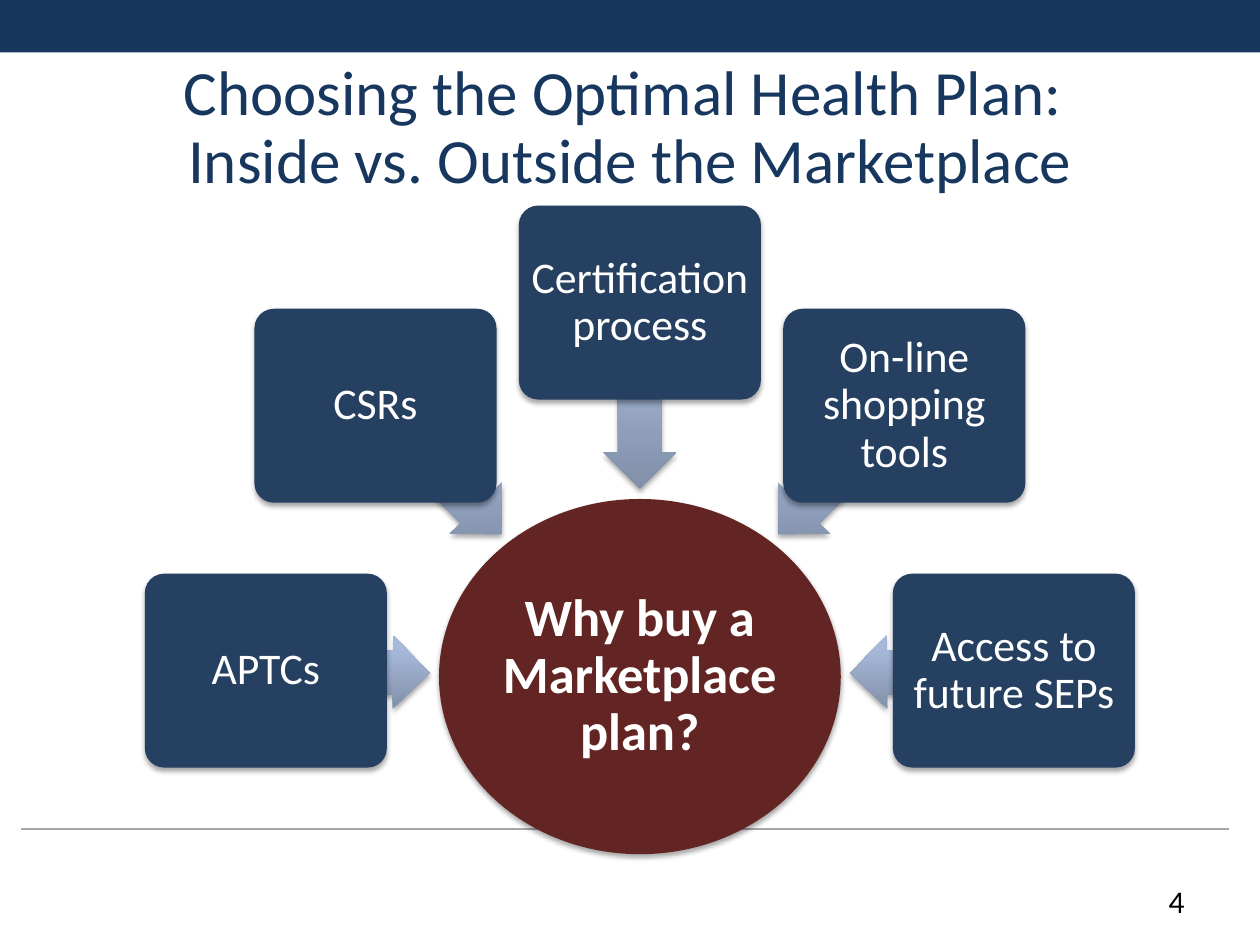
from lxml.etree import SubElement
from pptx import Presentation
from pptx.dml.color import RGBColor
from pptx.enum.shapes import MSO_CONNECTOR, MSO_SHAPE
from pptx.enum.text import MSO_ANCHOR, PP_ALIGN
from pptx.oxml import parse_xml
from pptx.oxml.ns import nsdecls, qn
from pptx.util import Cm, Pt

COLORS = {
    "navy": "17375E",
    "box": "254061",
    "hub": "632523",
    "rule": "A6A6A6",
    "white": "FFFFFF",
    "black": "000000",
}
ARROW_STOPS = [(0, "818FA8"), (80, "A7B9DA"), (100, "A7BADC")]
FONT = "Calibri"
CENTER_X = 12.9
BOX_SIZE = (4.88, 3.91)
ARROW_HEIGHT = 1.47

# distance from the centre line and height of each level's boxes and arrows
LEVELS = {
    "low": {"box": (7.54, 13.52), "arrow": (5.89, 13.54), "length": 3.3, "tilt": 89},
    "middle": {"box": (5.33, 8.18), "arrow": (4.06, 9.47), "length": 3.63, "tilt": 44.3},
    "top": {"box": (0, 6.1), "arrow": (0, 7.98), "length": 3.76, "tilt": 0},
}
REASONS = [
    ("APTCs", "low", -1),
    ("CSRs", "middle", -1),
    ("Certification process", "top", 1),
    ("On-line shopping tools", "middle", 1),
    ("Access to future SEPs", "low", 1),
]


def color(name):
    return RGBColor.from_string(COLORS[name])


def write_text(shape, text, size, ink, align=PP_ALIGN.CENTER, spacing=0.9,
               bold=False, margin=None, anchor=MSO_ANCHOR.MIDDLE):
    frame = shape.text_frame
    frame.word_wrap = True
    frame.vertical_anchor = anchor
    if margin is not None:
        frame.margin_left = frame.margin_right = Cm(margin)
        frame.margin_top = frame.margin_bottom = Cm(margin)
    para = frame.paragraphs[0]
    para.text = text
    para.alignment = align
    para.line_spacing = spacing
    para.font.name = FONT
    para.font.size = Pt(size)
    para.font.bold = bold
    para.font.color.rgb = color(ink)


def add_text(page, left, top, width, height, text, size, ink, **options):
    box = page.shapes.add_textbox(Cm(left), Cm(top), Cm(width), Cm(height))
    write_text(box, text, size, ink, **options)


def add_centered(page, kind, center, size, fill=None):
    """Add a borderless shape around its centre point."""
    (x, y), (width, height) = center, size
    shape = page.shapes.add_shape(
        kind, Cm(x - width / 2), Cm(y - height / 2), Cm(width), Cm(height))
    shape.line.fill.background()
    shape.shadow.inherit = False
    if fill:
        shape.fill.solid()
        shape.fill.fore_color.rgb = color(fill)
    return shape


def add_soft_shadow(shape):
    effects = shape._element.spPr.find(qn("a:effectLst"))
    effects.append(parse_xml(
        f'<a:outerShdw {nsdecls("a")} blurRad="{Pt(3.1)}" dist="{Pt(1.8)}" '
        f'dir="5400000" rotWithShape="0"><a:srgbClr val="{COLORS["black"]}">'
        '<a:alpha val="35000"/></a:srgbClr></a:outerShdw>'))


def fill_gradient(shape):
    """Shade from dark at the bottom to light at the top, whatever the rotation."""
    stops = "".join(
        f'<a:gs pos="{position * 1000}"><a:srgbClr val="{value}"/></a:gs>'
        for position, value in ARROW_STOPS)
    shape._element.spPr.find(qn("a:prstGeom")).addnext(parse_xml(
        f'<a:gradFill {nsdecls("a")} rotWithShape="0"><a:gsLst>{stops}</a:gsLst>'
        '<a:lin ang="16200000" scaled="0"/></a:gradFill>'))


def add_frame(page):
    """Add the top bar and the footer rule."""
    add_centered(page, MSO_SHAPE.RECTANGLE, (12.7, 0.53), (25.4, 1.06), "navy")
    rule = page.shapes.add_connector(
        MSO_CONNECTOR.STRAIGHT, Cm(0.43), Cm(16.71), Cm(24.77), Cm(16.71))
    rule.line.color.rgb = color("rule")
    rule.line.width = Pt(0.75)
    SubElement(rule._element.spPr, qn("a:effectLst"))


def add_hub(page):
    hub = add_centered(page, MSO_SHAPE.OVAL, (CENTER_X, 13.64), (8.1, 7.16), "hub")
    add_soft_shadow(hub)
    write_text(hub, "Why buy a Marketplace plan?", 30, "white", bold=True, margin=0.05)


def add_reason(page, text, level, side):
    """Add a reason box with its arrow to the hub; side is -1 left, 1 right."""
    place = LEVELS[level]
    arrow_offset, arrow_y = place["arrow"]
    arrow = add_centered(page, MSO_SHAPE.LEFT_ARROW,
                         (CENTER_X + side * arrow_offset, arrow_y),
                         (place["length"], ARROW_HEIGHT))
    arrow.adjustments[0] = 0.6
    arrow.adjustments[1] = 0.5
    arrow.rotation = 270 + side * place["tilt"]
    fill_gradient(arrow)
    add_soft_shadow(arrow)

    box_offset, box_y = place["box"]
    box = add_centered(page, MSO_SHAPE.ROUNDED_RECTANGLE,
                       (CENTER_X + side * box_offset, box_y), BOX_SIZE, "box")
    box.adjustments[0] = 0.1
    add_soft_shadow(box)
    write_text(box, text, 25, "white", margin=0.13)


def main():
    deck = Presentation()
    deck.slide_width, deck.slide_height = Cm(25.4), Cm(19.05)
    page = deck.slides.add_slide(deck.slide_layouts[6])
    add_frame(page)
    add_text(page, 1.27, 1.27, 22.86, 2.67,
             "Choosing the Optimal Health Plan: \vInside vs. Outside the Marketplace",
             36, "navy")
    add_hub(page)
    for text, level, side in REASONS:
        add_reason(page, text, level, side)
    add_text(page, 22.43, 17.65, 1.7, 1.02, "4", 18, "black",
             align=PP_ALIGN.RIGHT, spacing=1.0, anchor=MSO_ANCHOR.TOP)
    deck.save("out.pptx")


if __name__ == "__main__":
    main()
